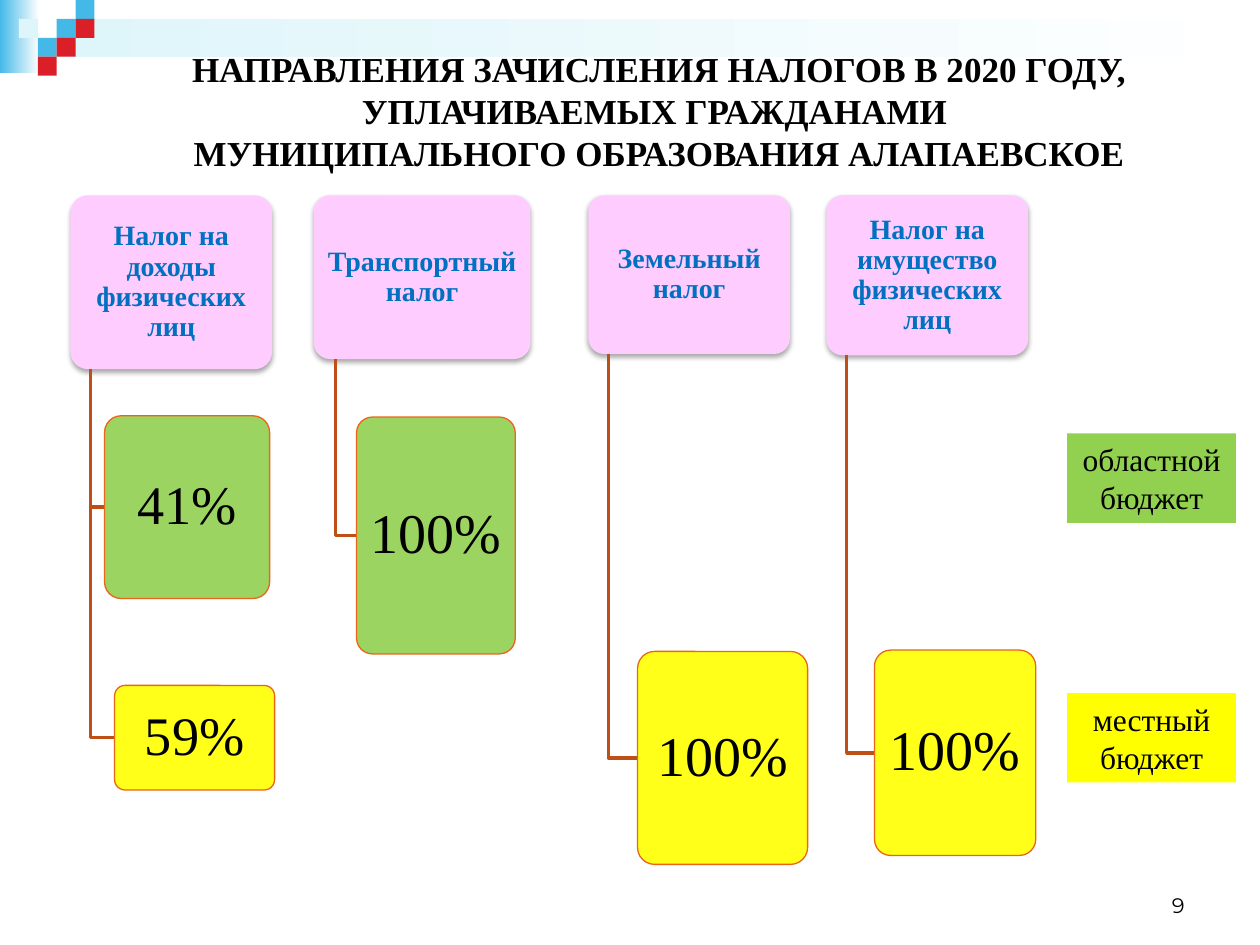
from lxml import etree
from pptx import Presentation
from pptx.dml.color import RGBColor
from pptx.enum.shapes import MSO_SHAPE as Shape
from pptx.enum.text import MSO_ANCHOR as Anchor, MSO_AUTO_SIZE as AutoSize, PP_ALIGN as Align
from pptx.oxml import parse_xml
from pptx.oxml.ns import nsdecls, qn
from pptx.util import Inches, Pt

COLORS = {
    "blue": "44B9E8", "red": "DA1F28", "pale": "DEF5FA", "white": "FFFFFF",
    "pink": "FFCCFF", "green": "92D050", "yellow": "FFFF00",
    "branch": "BC5016", "outline": "EB641B", "heading": "0070C0", "black": "000000",
}
SHADOW = (
    f'<a:effectLst {nsdecls("a")}><a:outerShdw blurRad="39370" dist="22860" dir="5400000" '
    'rotWithShape="0"><a:srgbClr val="000000"><a:alpha val="35000"/></a:srgbClr>'
    '</a:outerShdw></a:effectLst>'
)


def rgb(name):
    return RGBColor.from_string(COLORS[name])


def write(holder, text, size=18, color="black", font="Times New Roman", bold=False,
          align=Align.CENTER, anchor=Anchor.MIDDLE, inset=None, spacing=None):
    frame = holder.text_frame
    frame.word_wrap = True
    frame.auto_size = AutoSize.NONE
    frame.vertical_anchor = anchor
    if inset is not None:
        frame.margin_left = frame.margin_right = Inches(inset)
        frame.margin_top = frame.margin_bottom = Inches(0.02)
    frame.text = text
    paragraph = frame.paragraphs[0]
    paragraph.alignment = align
    if spacing:
        paragraph.line_spacing = spacing
    for run in paragraph.runs:
        run.font.name = font
        run.font.size = Pt(size)
        run.font.bold = bold
        run.font.color.rgb = rgb(color)


def add_box(kind, left, top, width, height, fill):
    box = slide.shapes.add_shape(kind, Inches(left), Inches(top), Inches(width), Inches(height))
    box.shadow.inherit = False
    box.line.fill.background()
    if kind == Shape.ROUNDED_RECTANGLE:
        box.adjustments[0] = 0.1
    if isinstance(fill, tuple):
        box.fill.gradient()
        box.fill.gradient_angle = 0
        for stop, color, position in zip(box.fill.gradient_stops, fill, (0, 1)):
            stop.color.rgb = rgb(color)
            stop.position = position
    else:
        box.fill.solid()
        box.fill.fore_color.rgb = rgb(fill)
    return box


prs = Presentation()
prs.slide_width, prs.slide_height = Inches(10), Inches(7.5)
slide = prs.slides.add_slide(prs.slide_layouts[5])

# Corner decoration: two gradient bands and a mosaic of squares
add_box(Shape.RECTANGLE, 0, 0, 0.31, 0.58, ("blue", "white"))
add_box(Shape.RECTANGLE, 0.45, 0.15, 9.55, 0.3, ("pale", "white"))
TILE = 0.15
for column, row, color in [(3, 1, "blue"), (4, 0, "blue"), (4, 1, "red"), (2, 2, "blue"),
                           (1, 1, "pale"), (3, 2, "red"), (2, 3, "red")]:
    add_box(Shape.RECTANGLE, column * TILE, row * TILE, TILE, TILE, color)

# Title
title = slide.shapes.title
title.left, title.top, title.width, title.height = (Inches(v) for v in (0.98, 0.13, 8.5, 1.5))
write(title, "НАПРАВЛЕНИЯ ЗАЧИСЛЕНИЯ НАЛОГОВ В 2020 ГОДУ, УПЛАЧИВАЕМЫХ ГРАЖДАНАМИ \v"
      "МУНИЦИПАЛЬНОГО ОБРАЗОВАНИЯ АЛАПАЕВСКОЕ", size=20, bold=True)

# Taxes: name, left, width, height, shares (text, size, left, top, width, height, color)
TAX_TOP = 1.55
taxes = [
    ("Налог на доходы физических лиц", 0.56, 1.6, 1.38,
     [("41%", 31, 0.83, 3.3, 1.31, 1.45, "green"),
      ("59%", 31, 0.91, 5.44, 1.27, 0.83, "yellow")]),
    ("Транспортный налог", 2.49, 1.72, 1.3,
     [("100%", 32, 2.83, 3.31, 1.26, 1.88, "green")]),
    ("Земельный налог", 4.67, 1.6, 1.26,
     [("100%", 32, 5.06, 5.17, 1.35, 1.69, "yellow")]),
    ("Налог на имущество физических лиц", 6.56, 1.6, 1.27,
     [("100%", 32, 6.94, 5.16, 1.28, 1.63, "yellow")]),
]
for name, tax_left, tax_width, tax_height, shares in taxes:
    tax = add_box(Shape.ROUNDED_RECTANGLE, tax_left, TAX_TOP, tax_width, tax_height, "pink")
    properties = tax.element.spPr
    properties.replace(properties.find(qn("a:effectLst")), parse_xml(SHADOW))
    write(tax, name, size=16, color="heading", bold=True, inset=0.03, spacing=0.9)

    for percent, size, left, top, width, height, color in shares:
        # Elbow branch from the tax down to the middle of its share
        stem_x = Inches(tax_left + tax_width / 10)
        middle = Inches(top + height / 2)
        builder = slide.shapes.build_freeform(stem_x, Inches(TAX_TOP + tax_height))
        builder.add_line_segments([(stem_x, middle), (Inches(left), middle)], close=False)
        branch = builder.convert_to_shape()
        branch.shadow.inherit = False
        branch.fill.background()
        branch.line.color.rgb = rgb("branch")
        branch.line.width = Pt(2)

        share = add_box(Shape.ROUNDED_RECTANGLE, left, top, width, height, color)
        fill_color = share.element.spPr.find(qn("a:solidFill"))[0]
        etree.SubElement(fill_color, qn("a:alpha")).set("val", "90000")
        share.line.color.rgb = rgb("outline")
        share.line.width = Pt(0.75)
        write(share, percent, size=size, inset=0.04, spacing=0.9)

# Legend
for budget, top, color in [("областной бюджет", 3.44, "green"), ("местный бюджет", 5.5, "yellow")]:
    write(add_box(Shape.RECTANGLE, 8.47, top, 1.34, 0.71, color), budget)

# Page number
page_number = slide.shapes.add_textbox(Inches(7.17), Inches(6.83), Inches(2.33), Inches(0.5))
write(page_number, "9", size=12, font="Montserrat", align=Align.RIGHT, anchor=Anchor.BOTTOM)

prs.save("out.pptx")
